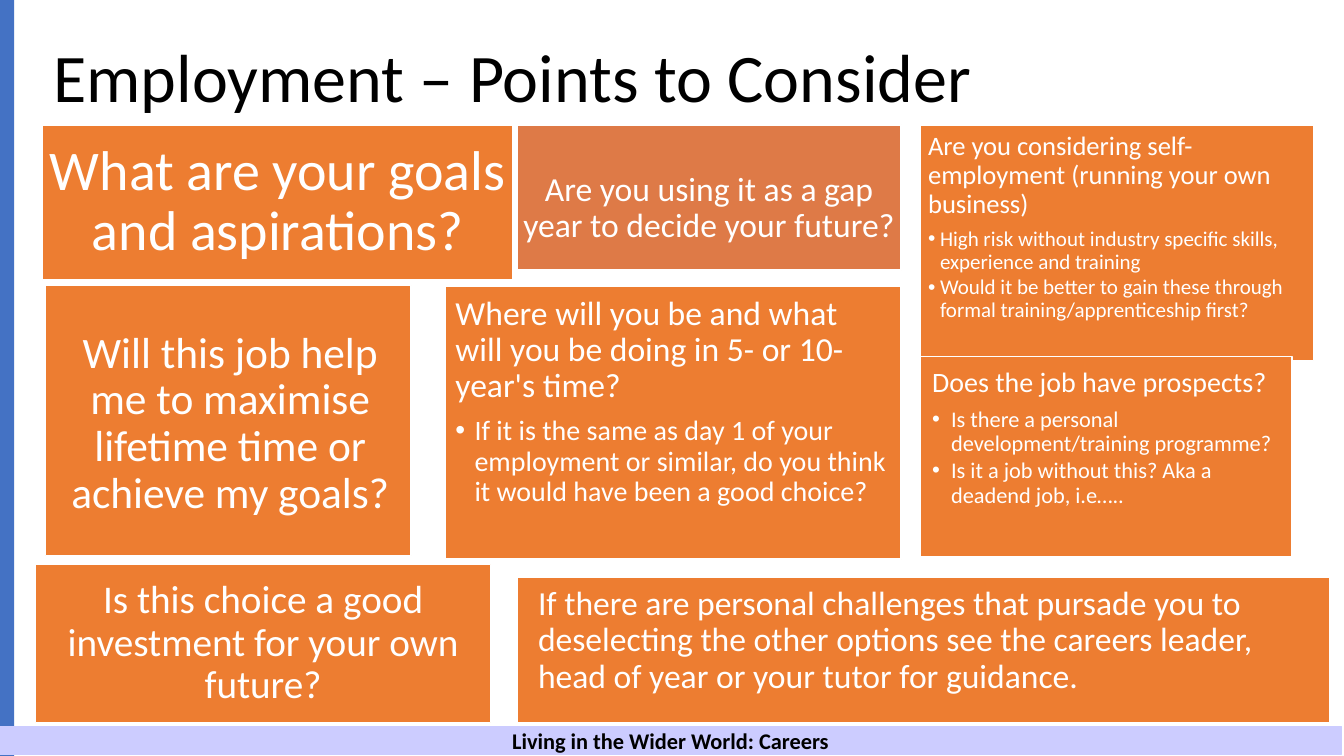
from lxml import etree
from pptx import Presentation
from pptx.dml.color import RGBColor
from pptx.enum.shapes import MSO_SHAPE as Shape
from pptx.enum.text import MSO_ANCHOR as Anchor, MSO_AUTO_SIZE as AutoSize, PP_ALIGN as Align
from pptx.oxml.ns import qn
from pptx.util import Cm, Pt

FONT = "Calibri"
ORANGE, WHITE, BLACK, LILAC = "ED7D31", "FFFFFF", "000000", "CCCCFF"


def add_box(left, top, width, height, fill, line=None, line_width=1):
    shape = slide.shapes.add_shape(Shape.RECTANGLE, Cm(left), Cm(top), Cm(width), Cm(height))
    shape.shadow.inherit = False
    shape.fill.solid()
    shape.fill.fore_color.rgb = RGBColor.from_string(fill)
    if line:
        shape.line.color.rgb = RGBColor.from_string(line)
        shape.line.width = Pt(line_width)
    else:
        shape.line.fill.background()
    return shape


def add_text(paragraph, text, size, color, align, bold=False):
    paragraph.alignment = align
    run = paragraph.add_run()
    run.text = text
    run.font.name = FONT
    run.font.size = Pt(size)
    run.font.bold = bold
    run.font.color.rgb = RGBColor.from_string(color)


presentation = Presentation()
presentation.slide_width = Cm(33.87)
presentation.slide_height = Cm(19.05)
slide = presentation.slides.add_slide(presentation.slide_layouts[5])

title = slide.shapes.title
title.left, title.top, title.width, title.height = Cm(1.09), Cm(0.89), Cm(31.7), Cm(2.26)
title.text_frame.auto_size = AutoSize.NONE
title.text_frame.vertical_anchor = Anchor.MIDDLE
heading = title.text_frame.paragraphs[0]
heading.line_spacing = 0.9
add_text(heading, "Employment – Points to Consider", 48.6, BLACK, Align.LEFT)

add_box(0, 0, 0.36, 19.05, "4472C4")

# place, fill, insets (left, top, right, bottom), centred, question, size, bullets, bullet size, indent
cards = [
    ((1.07, 3.15, 11.86, 3.91), ORANGE, (0.15, 0.15, 0.15, 0.15), True,
     "What are your goals and aspirations?", 40, [], 0, 0),
    ((13.03, 3.15, 9.68, 3.66), "DE7A47", (0.15, 0.71, 0.15, 0.15), True,
     "Are you using it as a gap year to decide your future?", 24, [], 0, 0),
    ((23.19, 3.15, 9.91, 5.94), ORANGE, (0.2, 0.2, 0.2, 0.2), False,
     "Are you considering self-employment (running your own business)", 19,
     ["High risk without industry specific skills, experience and training",
      "Would it be better to gain these through formal training/apprenticeship first?"], 15, 0.3),
    ((23.19, 8.99, 9.37, 5.03), ORANGE, (0.3, 0.28, 0.1, 0.2), False,
     "Does the job have prospects?", 20,
     ["Is there a personal development/training programme?",
      "Is it a job without this? Aka a deadend job, i.e….."], 16, 0.48),
    ((11.23, 7.21, 11.48, 6.88), ORANGE, (0.25, 0.25, 0.25, 0.25), False,
     "Where will you be and what will you be doing in 5- or 10-year's time?", 24,
     ["If it is the same as day 1 of your employment or similar, "
      "do you think it would have been a good choice?"], 20, 0.48),
    ((0.89, 14.22, 11.48, 3.99), ORANGE, (0.25, 0.25, 0.25, 0.25), True,
     "Is this choice a good investment for your own future?", 28, [], 0, 0),
    ((1.14, 7.19, 9.22, 6.81), ORANGE, (0.38, 0.43, 0.28, 0.23), True,
     "Will this job help me to maximise lifetime time or achieve my goals?", 31, [], 0, 0),
    ((13.03, 14.55, 20.47, 3.66), ORANGE, (0.53, 0.23, 0.53, 0), False,
     "If there are personal challenges that pursade you to deselecting the other options "
     "see the careers leader, head of year or your tutor for guidance.", 24, [], 0, 0),
]

for place, fill, insets, centred, question, size, bullets, bullet_size, indent in cards:
    frame = add_box(*place, fill, WHITE).text_frame
    frame.word_wrap = True
    frame.vertical_anchor = Anchor.MIDDLE if centred else Anchor.TOP
    frame.margin_left, frame.margin_top, frame.margin_right, frame.margin_bottom = map(Cm, insets)
    paragraph = frame.paragraphs[0]
    paragraph.line_spacing = 0.9
    paragraph.space_after = Pt(round(size * 0.35, 1))
    add_text(paragraph, question, size, WHITE, Align.CENTER if centred else Align.LEFT)
    for bullet in bullets:
        paragraph = frame.add_paragraph()
        paragraph.level = 1
        properties = paragraph._p.get_or_add_pPr()
        properties.set("marL", str(Cm(indent)))
        properties.set("indent", str(-Cm(indent)))
        etree.SubElement(properties, qn("a:buFont")).set("typeface", "Arial")
        etree.SubElement(properties, qn("a:buChar")).set("char", "•")
        paragraph.line_spacing = 0.9
        paragraph.space_after = Pt(round(bullet_size * 0.15, 1))
        add_text(paragraph, bullet, bullet_size, WHITE, Align.LEFT)

add_box(0, 18.31, 33.81, 0.69, LILAC, LILAC)
footer = add_box(5.33, 18.39, 23.14, 0.56, LILAC, LILAC, 0.75)
footer.text_frame.vertical_anchor = Anchor.MIDDLE
add_text(footer.text_frame.paragraphs[0], "Living in the Wider World: Careers", 16, BLACK, Align.CENTER, True)

presentation.save("out.pptx")
